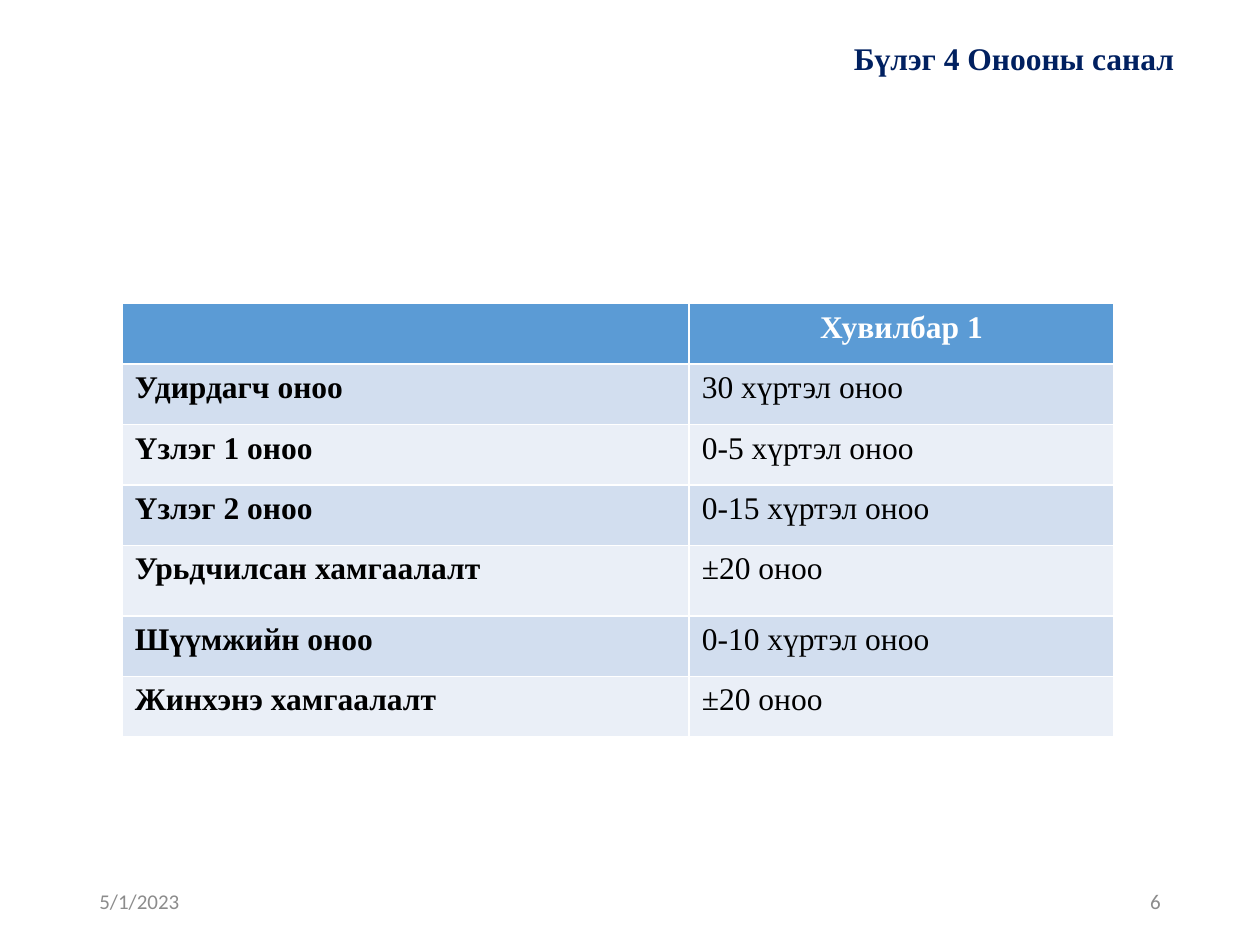
from dataclasses import dataclass

from pptx import Presentation
from pptx.dml.color import RGBColor
from pptx.enum.text import MSO_ANCHOR, PP_ALIGN
from pptx.util import Inches, Pt


@dataclass(frozen=True)
class Theme:
    serif: str = "Times New Roman"
    sans: str = "Calibri"
    main: int = 18
    small: int = 12
    navy: str = "002060"
    grey: str = "8C8C8C"
    white: str = "FFFFFF"
    black: str = "000000"
    head: str = "5B9BD5"
    bands: tuple = ("D2DEEF", "EAEFF7")


THEME = Theme()
WIDE, HIGH = 10, 7.5
LEFT, RIGHT = PP_ALIGN.LEFT, PP_ALIGN.RIGHT
COLS = (4.5, 3.37)
ROW, TALL = 0.48, 0.56
SCORES = [
    ("", "Хувилбар 1"),
    ("Удирдагч оноо", "30 хүртэл оноо"),
    ("Үзлэг 1 оноо", "0-5 хүртэл оноо"),
    ("Үзлэг 2 оноо", "0-15 хүртэл оноо"),
    ("Урьдчилсан хамгаалалт", "±20 оноо"),
    ("Шүүмжийн оноо", "0-10 хүртэл оноо"),
    ("Жинхэнэ хамгаалалт", "±20 оноо"),
]


def write(frame, text, color, align=LEFT, **form):
    """Put one formatted paragraph in a text frame."""
    para = frame.paragraphs[0]
    para.text, para.alignment = text, align
    look = {"name": THEME.serif, "size": Pt(THEME.main), "bold": False} | form
    for font in [para.font] + [run.font for run in para.runs]:
        for key, value in look.items():
            setattr(font, key, value)
        font.color.rgb = RGBColor.from_string(color)
    return para


def add_title(slide, box, text):
    title = slide.shapes.title
    for key, value in zip(("left", "top", "width", "height"), box):
        setattr(title, key, Inches(value))
    title.text_frame.vertical_anchor = MSO_ANCHOR.MIDDLE
    para = write(title.text_frame, text, THEME.navy, RIGHT, bold=True)
    para.line_spacing = 0.9


def add_scores(slide, box, rows):
    shape = slide.shapes.add_table(len(rows), len(COLS), *map(Inches, box))
    table = shape.table
    for col, width in zip(table.columns, COLS):
        col.width = Inches(width)
    for r, texts in enumerate(rows):
        table.rows[r].height = Inches(TALL if r == 4 else ROW)
        fill = THEME.bands[(r - 1) % 2] if r else THEME.head
        ink = THEME.black if r else THEME.white
        for c, text in enumerate(texts):
            cell = table.cell(r, c)
            cell.fill.solid()
            cell.fill.fore_color.rgb = RGBColor.from_string(fill)
            align = LEFT if r else PP_ALIGN.CENTER
            write(cell.text_frame, text, ink, align, bold=r == 0 or c == 0)


def add_footer(slide, box, date, page):
    """Set the date and page number at the two ends of the box."""
    left, top, width, height = box
    part = 2.25
    for x, text, align in ((left, date, LEFT), (left + width - part, page, RIGHT)):
        shape = slide.shapes.add_textbox(*map(Inches, (x, top, part, height)))
        frame = shape.text_frame
        frame.word_wrap = True
        frame.vertical_anchor = MSO_ANCHOR.MIDDLE
        write(frame, text, THEME.grey, align, name=THEME.sans, size=Pt(THEME.small))


def main():
    deck = Presentation()
    deck.slide_width, deck.slide_height = Inches(WIDE), Inches(HIGH)
    slide = deck.slides.add_slide(deck.slide_layouts[5])
    add_footer(slide, (0.69, 6.95, 8.62, 0.4), "5/1/2023", "6")
    add_title(slide, (3.57, 0.28, 5.85, 0.39), "Бүлэг 4 Онооны санал")
    add_scores(slide, (0.97, 2.41, sum(COLS), 6 * ROW + TALL), SCORES)
    deck.save("out.pptx")


if __name__ == "__main__":
    main()
